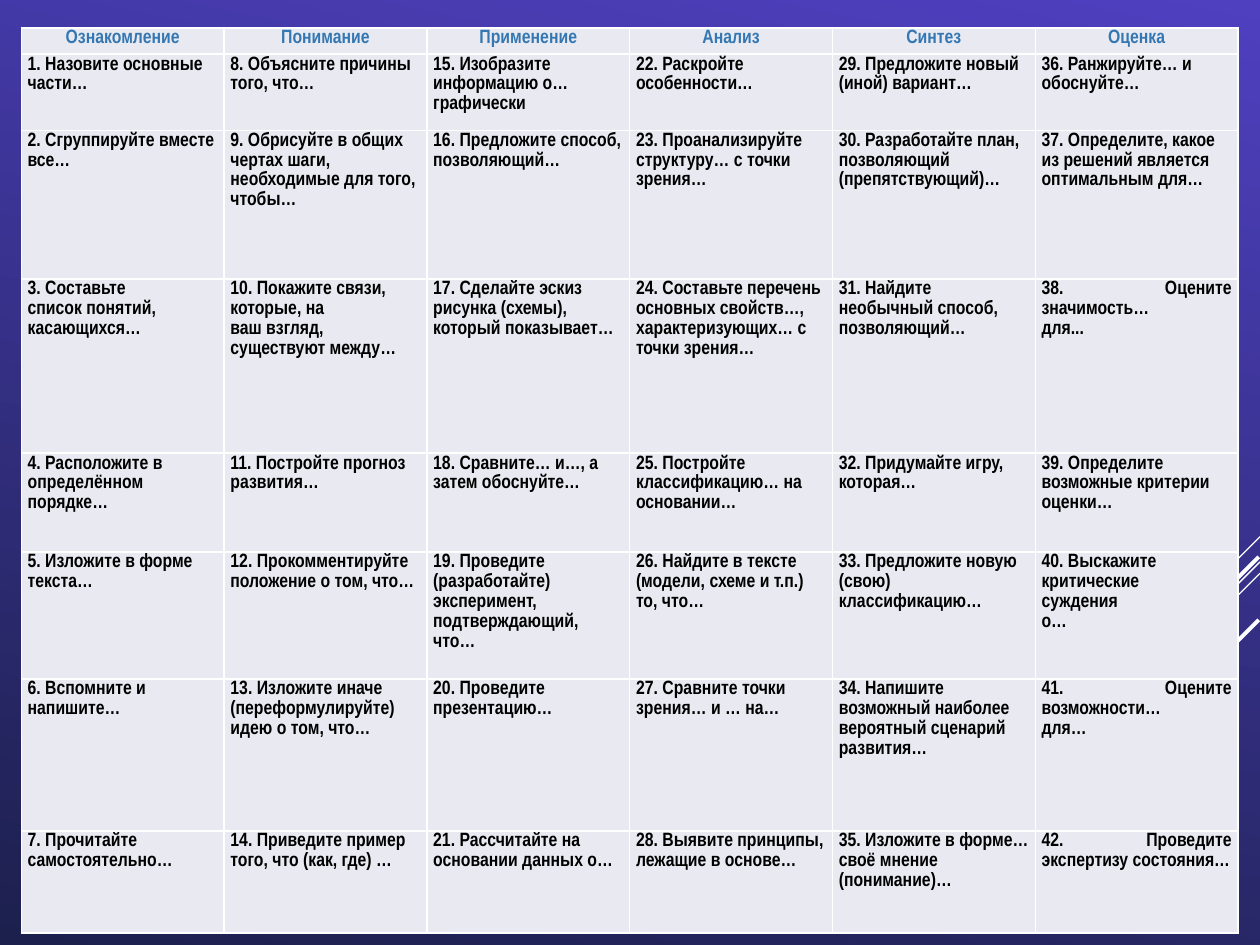
from dataclasses import dataclass

from lxml import etree
from pptx import Presentation
from pptx import util as u
from pptx.dml.color import RGBColor
from pptx.enum import shapes, text
from pptx.oxml import ns

COLORS = {
    "bg_top": "4F40C0",
    "bg_bottom": "1C204D",
    "line": "FFFFFF",
    "cell": "E9EAF1",
    "header": "3477B2",
    "body": "000000",
}
FONT = "Arial Narrow"
FONT_SIZE = 11
TABLE_LEFT, TABLE_TOP, COL_WIDTH = 12.2, 16, 115.9
ROW_HEIGHTS = [15, 43.5, 85, 99.5, 56.5, 72.5, 87, 58.2]
JUSTIFIED = {38, 41, 42}


@dataclass
class Ray:
    x: float
    y: float
    run: float
    width: float


@dataclass
class Level:
    title: str
    tasks: list[str]


RAYS = [
    Ray(720, 306.7, 59.8, 0.75),
    Ray(720, 321.1, 194.7, 0.75),
    Ray(720, 327.6, 123.8, 0.75),
    Ray(719.3, 318.2, 113, 2.25),
    Ray(719.3, 354.2, 82, 2.25),
]

LEVELS = [
    Level("Ознакомление", [
        "Назовите основные части…",
        "Сгруппируйте вместе все…",
        "Составьте\nсписок понятий,\nкасающихся…",
        "Расположите в определённом\nпорядке…",
        "Изложите в форме\nтекста…",
        "Вспомните и напишите…",
        "Прочитайте самостоятельно…",
    ]),
    Level("Понимание", [
        "Объясните причины того, что…",
        "Обрисуйте в общих чертах шаги, необходимые для того, чтобы…",
        "Покажите связи, которые, на\nваш взгляд, существуют между…",
        "Постройте прогноз развития…",
        "Прокомментируйте\nположение о том, что…",
        "Изложите иначе (переформулируйте) идею о том, что…",
        "Приведите пример того, что (как, где) …",
    ]),
    Level("Применение", [
        "Изобразите информацию о… графически",
        "Предложите способ, позволяющий…",
        "Сделайте эскиз рисунка (схемы), который показывает…",
        "Сравните… и…, а затем обоснуйте…",
        "Проведите (разработайте) эксперимент, подтверждающий, что…",
        "Проведите презентацию…",
        "Рассчитайте на основании данных о…",
    ]),
    Level("Анализ", [
        "Раскройте особенности…",
        "Проанализируйте структуру… с точки зрения…",
        "Составьте перечень основных свойств…, характеризующих… с точки зрения…",
        "Постройте классификацию… на основании…",
        "Найдите в тексте (модели, схеме и т.п.)\nто, что…",
        "Сравните точки зрения… и … на…",
        "Выявите принципы, лежащие в основе…",
    ]),
    Level("Синтез", [
        "Предложите новый (иной) вариант…",
        "Разработайте план, позволяющий (препятствующий)…",
        "Найдите\nнеобычный способ,\nпозволяющий…",
        "Придумайте игру, которая…",
        "Предложите новую (свою)\nклассификацию…",
        "Напишите возможный наиболее\nвероятный сценарий развития…",
        "Изложите в форме… своё мнение (понимание)…",
    ]),
    Level("Оценка", [
        "Ранжируйте… и\nобоснуйте…",
        "Определите, какое из решений является оптимальным для…",
        "Оцените значимость…\nдля...",
        "Определите возможные критерии оценки…",
        "Выскажите критические\nсуждения\nо…",
        "Оцените возможности…\nдля…",
        "Проведите экспертизу состояния…",
    ]),
]


def rgb(name: str) -> RGBColor:
    return RGBColor.from_string(COLORS[name])


def paint_background(s) -> None:
    fill = s.background.fill
    fill.gradient()
    fill.gradient_angle = 258
    for stop, name in zip(fill.gradient_stops, ("bg_top", "bg_bottom")):
        stop.color.rgb = rgb(name)


def draw_ray(s, ray: Ray) -> None:
    sp = s.shapes.add_connector(
        shapes.MSO_CONNECTOR.STRAIGHT, u.Pt(ray.x), u.Pt(ray.y),
        u.Pt(ray.x - ray.run), u.Pt(ray.y + ray.run))
    sp.line.color.rgb = rgb("line")
    sp.line.width = u.Pt(ray.width)
    etree.SubElement(sp._element.spPr, ns.qn("a:effectLst"))


def style_cell(cell) -> None:
    tc_pr = cell._tc.get_or_add_tcPr()
    for side in ("lnL", "lnR", "lnT", "lnB"):
        ln = etree.SubElement(tc_pr, ns.qn(f"a:{side}"), w=str(u.Pt(1)))
        solid = etree.SubElement(ln, ns.qn("a:solidFill"))
        etree.SubElement(solid, ns.qn("a:srgbClr"), val=COLORS["line"])
    cell.fill.solid()
    cell.fill.fore_color.rgb = rgb("cell")
    cell.margin_left = cell.margin_right = u.Pt(3.6)
    cell.margin_top = cell.margin_bottom = u.Pt(0)


def write_cell(cell, content: str, color: str, first_align) -> None:
    style_cell(cell)
    tf = cell.text_frame
    for i, line in enumerate(content.split("\n")):
        p = tf.add_paragraph() if i else tf.paragraphs[0]
        p.alignment = text.PP_ALIGN.LEFT if i else first_align
        p.line_spacing = 1.1
        r = p.add_run()
        r.text = line
        r.font.name = FONT
        r.font.size = u.Pt(FONT_SIZE)
        r.font.bold = True
        r.font.color.rgb = rgb(color)


def draw_table(s, levels: list[Level]) -> None:
    table = s.shapes.add_table(
        len(ROW_HEIGHTS), len(levels), u.Pt(TABLE_LEFT), u.Pt(TABLE_TOP),
        u.Pt(COL_WIDTH * len(levels)), u.Pt(sum(ROW_HEIGHTS))).table
    for row, height in zip(table.rows, ROW_HEIGHTS):
        row.height = u.Pt(height)
    number = 0
    for col, level in enumerate(levels):
        table.columns[col].width = u.Pt(COL_WIDTH)
        write_cell(table.cell(0, col), level.title, "header", text.PP_ALIGN.CENTER)
        for row, task in enumerate(level.tasks, start=1):
            number += 1
            align = text.PP_ALIGN.JUSTIFY if number in JUSTIFIED else text.PP_ALIGN.LEFT
            write_cell(table.cell(row, col), f"{number}. {task}", "body", align)


def main() -> None:
    prs = Presentation()
    prs.slide_width, prs.slide_height = u.Pt(720), u.Pt(540)
    s = prs.slides.add_slide(prs.slide_layouts[6])
    paint_background(s)
    for ray in RAYS:
        draw_ray(s, ray)
    draw_table(s, LEVELS)
    prs.save("out.pptx")


if __name__ == "__main__":
    main()
